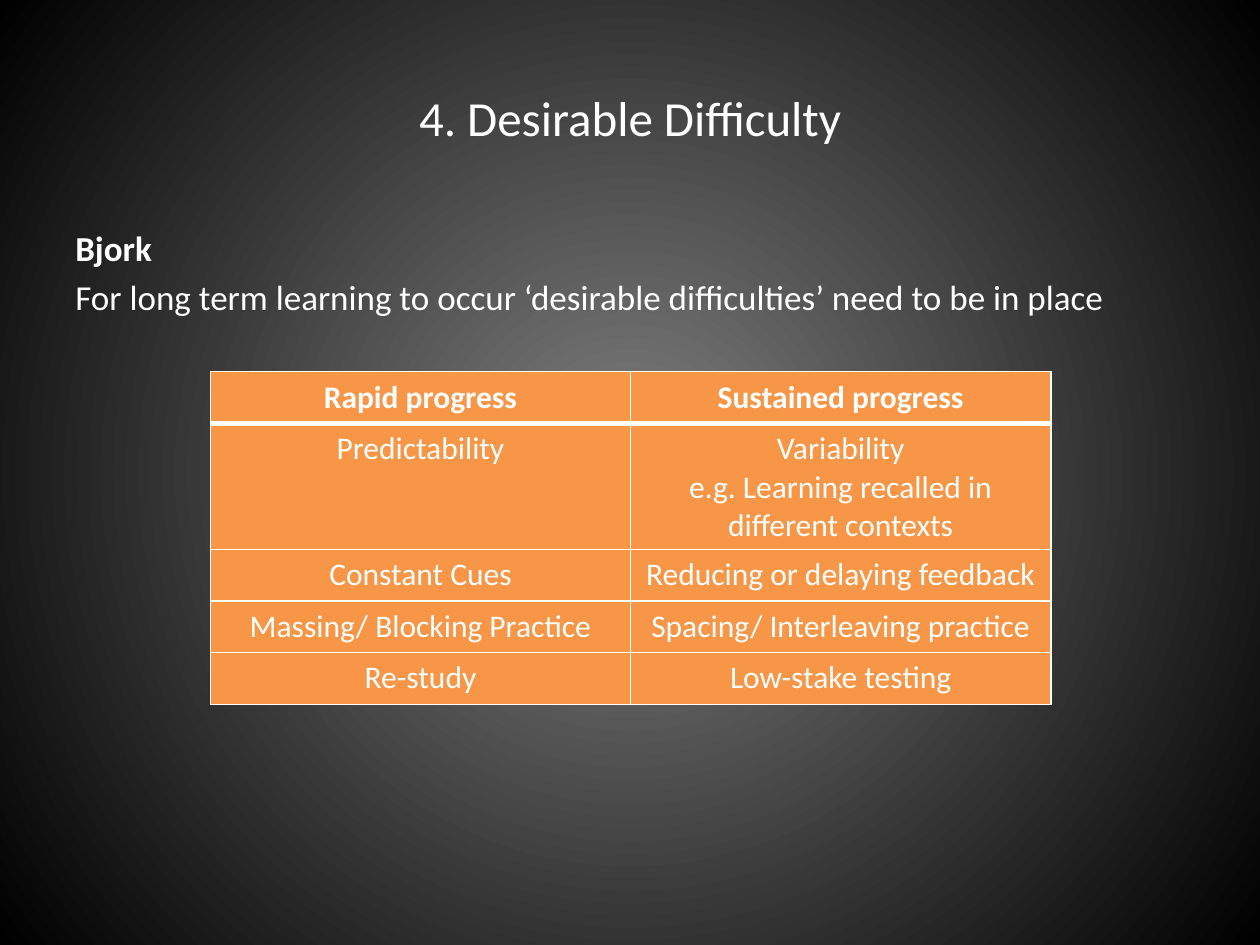
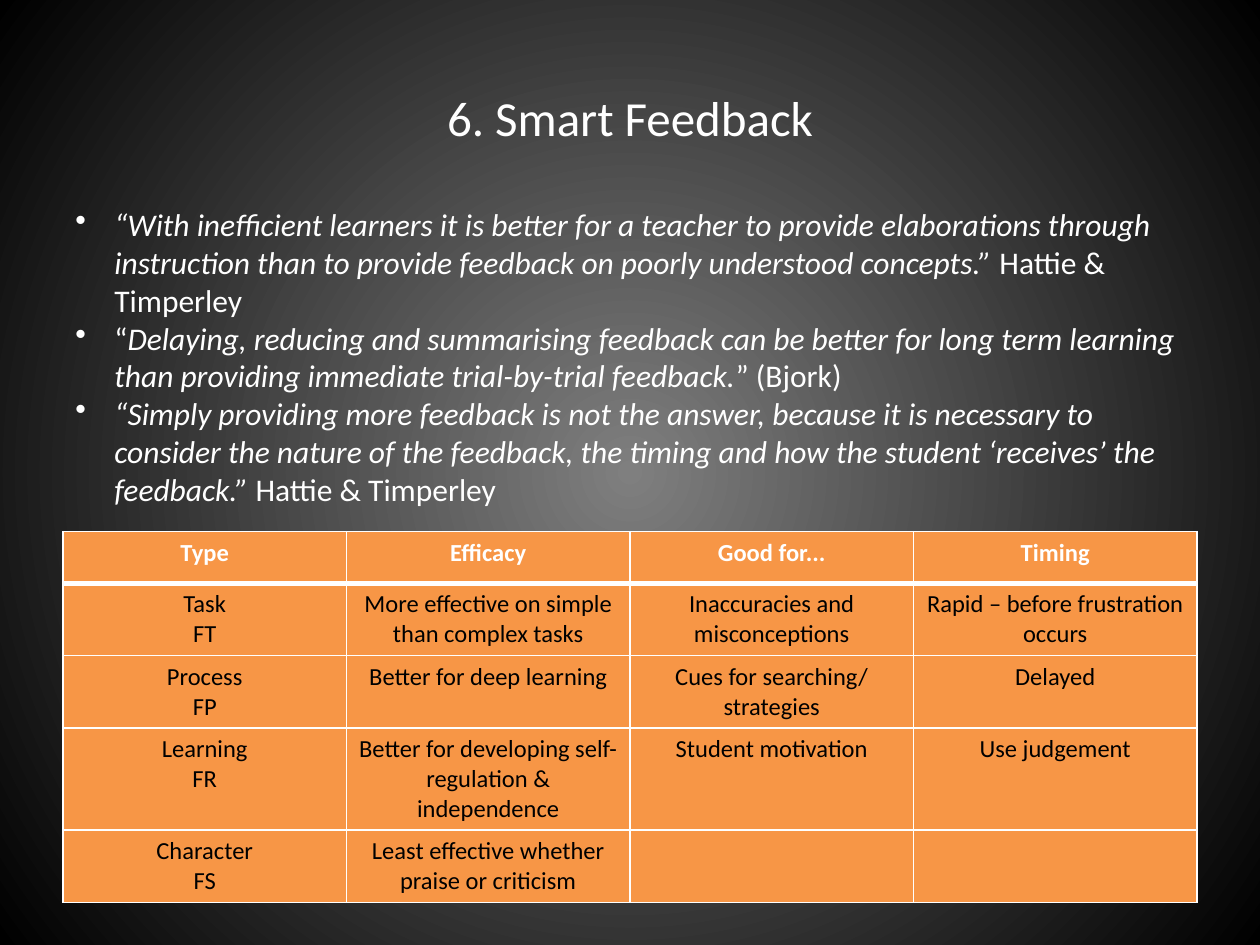
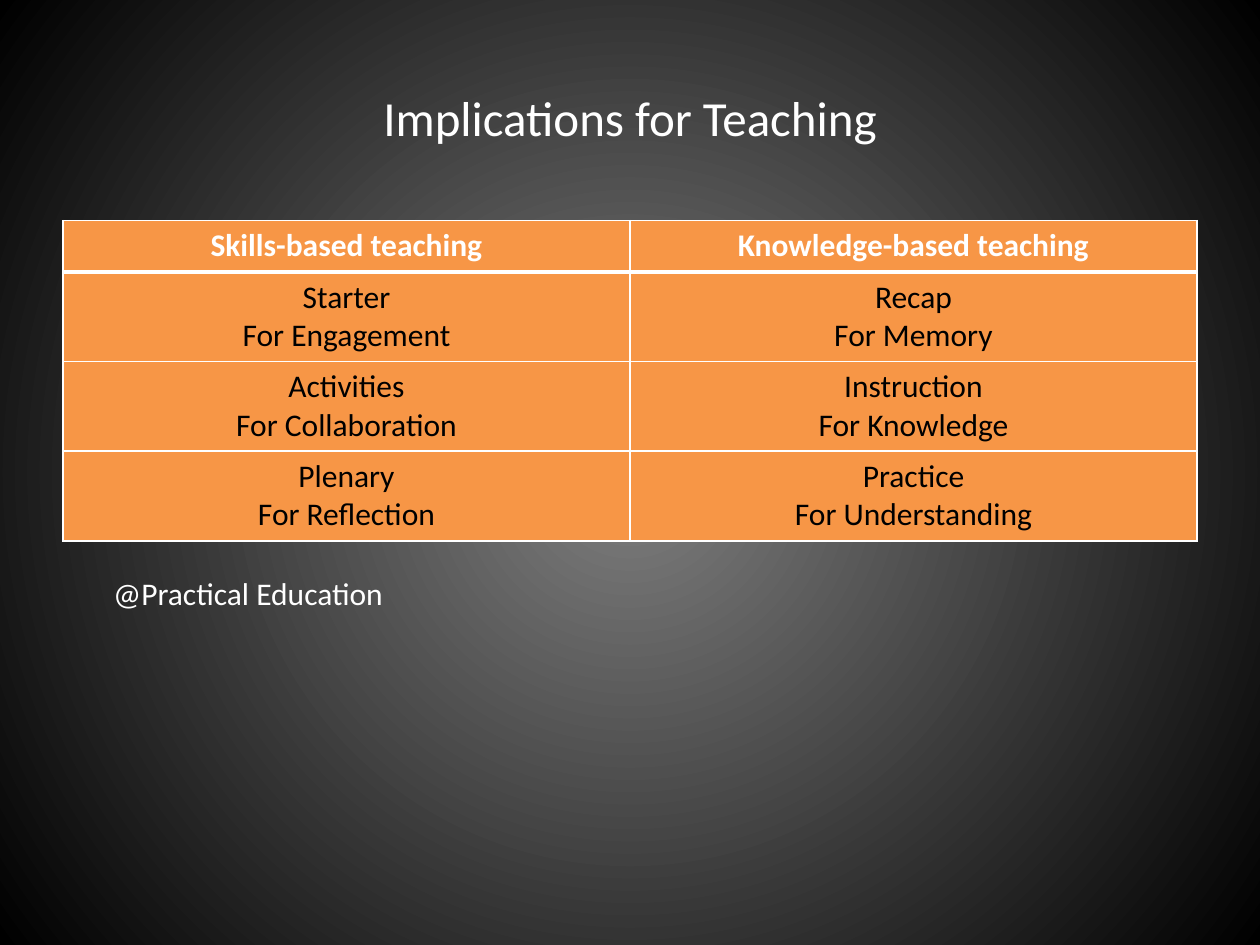
from dataclasses import dataclass

from lxml import etree
from pptx import Presentation
from pptx.dml.color import RGBColor
from pptx.enum.text import MSO_ANCHOR, PP_ALIGN
from pptx.oxml.ns import qn
from pptx.util import Inches, Pt

CENTER = PP_ALIGN.CENTER
MIDDLE = MSO_ANCHOR.MIDDLE
TITLE_ONLY = 5


@dataclass(frozen=True)
class Theme:
    font: str = "Calibri"
    white: str = "FFFFFF"
    black: str = "000000"
    glow: str = "7F7F7F"
    orange: str = "F79646"
    title: int = 28
    lead: int = 20
    body: int = 18
    small: int = 14
    thin: int = 1
    thick: int = 3


THEME = Theme()
TITLE_BOX = (0.5, 0.3, 9, 1.25)
ROW_HEIGHT = 0.41
BULLET_INDENT = 0.31

# Content: text paragraphs are lists of (text, style), style being "", "b" or "i"
LEAD = [
    [("Bjork", "b")],
    [("For long term learning to occur ‘desirable difficulties’ need to be in place", "")],
]
PROGRESS = [
    ("Rapid progress", "Sustained progress"),
    ("Predictability", "Variability\ne.g. Learning recalled in different contexts"),
    ("Constant Cues", "Reducing or delaying feedback"),
    ("Massing/ Blocking Practice", "Spacing/ Interleaving practice"),
    ("Re-study", "Low-stake testing"),
]
QUOTES = [
    [("“With inefficient learners it is better for a teacher to provide elaborations "
      "through instruction than to provide feedback on poorly understood concepts.” ", "i"),
     ("Hattie & Timperley", "")],
    [("“", ""),
     ("Delaying, reducing and summarising feedback can be better for long term learning "
      "than providing immediate trial-by-trial feedback.", "i"),
     ("” (Bjork)", "")],
    [("“Simply providing more feedback is not the answer, because it is necessary to "
      "consider the nature of the feedback, the timing and how the student ‘receives’ "
      "the feedback.” ", "i"),
     ("Hattie & Timperley", "")],
]
FEEDBACK = [
    ("Type", "Efficacy", "Good for...", "Timing"),
    ("Task\nFT", "More effective on simple than complex tasks",
     "Inaccuracies and misconceptions", "Rapid – before frustration occurs"),
    ("Process\nFP", "Better for deep learning", "Cues for searching/ strategies", "Delayed"),
    ("Learning\nFR", "Better for developing self-regulation & independence",
     "Student motivation", "Use judgement"),
    ("Character\nFS", "Least effective whether praise or criticism", "", ""),
]
TEACHING = [
    ("Skills-based teaching", "Knowledge-based teaching"),
    ("Starter\nFor Engagement", "Recap\nFor Memory"),
    ("Activities\nFor Collaboration", "Instruction\nFor Knowledge"),
    ("Plenary\nFor Reflection", "Practice\nFor Understanding"),
]
SOURCE = [[("@Practical Education", "")]]


# Shared helpers
def inches(box):
    return [Inches(v) for v in box]


def set_font(font, size, color=THEME.white, bold=False):
    font.name = THEME.font
    font.size = Pt(size)
    font.bold = bold
    font.color.rgb = RGBColor.from_string(color)


def set_background(master):
    fill = master.background.fill
    fill.gradient()
    for stop, color in zip(fill.gradient_stops, (THEME.glow, THEME.black)):
        stop.color.rgb = RGBColor.from_string(color)
    lin = master.element.find(".//" + qn("p:bg")).find(".//" + qn("a:lin"))
    radial = etree.Element(qn("a:path"), path="circle")
    etree.SubElement(radial, qn("a:fillToRect"), l="50000", t="50000", r="50000", b="50000")
    lin.getparent().replace(lin, radial)


def add_slide(prs, title):
    slide = prs.slides.add_slide(prs.slide_layouts[TITLE_ONLY])
    sp = slide.shapes.title
    sp.left, sp.top, sp.width, sp.height = inches(TITLE_BOX)
    tf = sp.text_frame
    tf.text = title
    tf.vertical_anchor = MIDDLE
    p = tf.paragraphs[0]
    p.alignment = CENTER
    set_font(p.font, THEME.title)
    return slide


def add_bullet(p):
    pPr = p._p.get_or_add_pPr()
    pPr.set("marL", str(Inches(BULLET_INDENT)))
    pPr.set("indent", str(-Inches(BULLET_INDENT)))
    bullet = etree.Element(qn("a:buChar"), char="•")
    pPr.insert(0, bullet)


def add_text(slide, box, paragraphs, size, space_before=0, bulleted=False):
    tf = slide.shapes.add_textbox(*inches(box)).text_frame
    tf.word_wrap = True
    for i, runs in enumerate(paragraphs):
        p = tf.paragraphs[0] if i == 0 else tf.add_paragraph()
        p.space_before = Pt(space_before)
        if bulleted:
            add_bullet(p)
        for text, style in runs:
            r = p.add_run()
            r.text = text
            set_font(r.font, size, bold=style == "b")
            r.font.italic = style == "i"


def set_borders(cell, top, bottom):
    tcPr = cell._tc.get_or_add_tcPr()
    widths = {"a:lnL": THEME.thin, "a:lnR": THEME.thin, "a:lnT": top, "a:lnB": bottom}
    for tag, width in widths.items():
        ln = etree.SubElement(tcPr, qn(tag), w=str(Pt(width)))
        solid = etree.SubElement(ln, qn("a:solidFill"))
        etree.SubElement(solid, qn("a:srgbClr"), val=THEME.white)


def add_grid(slide, left, top, width, rows, size, body_color=THEME.black):
    n_rows, n_cols = len(rows), len(rows[0])
    box = inches((left, top, width, ROW_HEIGHT * n_rows))
    table = slide.shapes.add_table(n_rows, n_cols, *box).table
    for i, row in enumerate(rows):
        for j, text in enumerate(row):
            cell = table.cell(i, j)
            set_borders(cell, THEME.thick if i == 1 else THEME.thin,
                        THEME.thick if i == 0 else THEME.thin)
            cell.fill.solid()
            cell.fill.fore_color.rgb = RGBColor.from_string(THEME.orange)
            cell.text_frame.text = text
            for p in cell.text_frame.paragraphs:
                p.alignment = CENTER
                set_font(p.font, size, THEME.white if i == 0 else body_color, bold=i == 0)


def main():
    prs = Presentation()
    prs.slide_width, prs.slide_height = Inches(10), Inches(7.5)
    set_background(prs.slide_master)

    # Desirable difficulty
    slide = add_slide(prs, "4. Desirable Difficulty")
    add_text(slide, (0.5, 1.75, 9, 4.95), LEAD, THEME.lead, space_before=4)
    add_grid(slide, 1.67, 2.95, 6.67, PROGRESS, THEME.body, THEME.white)

    # Smart feedback
    slide = add_slide(prs, "6. Smart Feedback")
    add_grid(slide, 0.5, 4.22, 9, FEEDBACK, THEME.small)
    add_text(slide, (0.5, 1.58, 9, 2.52), QUOTES, THEME.body, bulleted=True)

    # Implications for teaching
    slide = add_slide(prs, "Implications for Teaching")
    add_grid(slide, 0.5, 1.75, 9, TEACHING, THEME.body)
    add_text(slide, (0.8, 4.51, 6.04, 0.4), SOURCE, THEME.body)

    prs.save("out.pptx")


if __name__ == "__main__":
    main()
